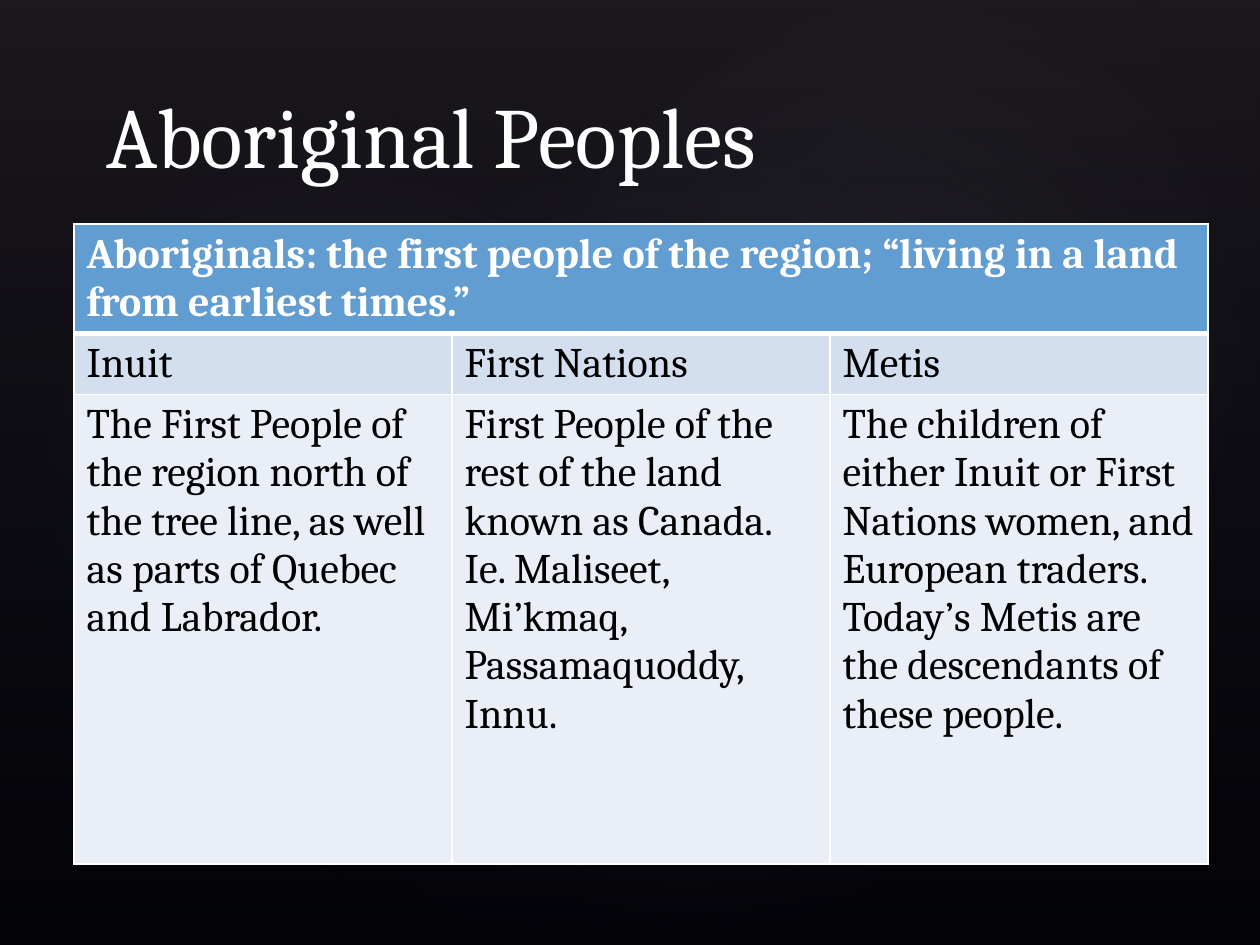
from pptx import Presentation
from pptx.dml.color import RGBColor
from pptx.enum.shapes import MSO_SHAPE
from pptx.enum.text import MSO_ANCHOR, MSO_AUTO_SIZE, PP_ALIGN
from pptx.oxml import parse_xml
from pptx.oxml.ns import nsdecls
from pptx.util import Emu, Pt

RECT, OVAL = MSO_SHAPE.RECTANGLE, MSO_SHAPE.OVAL
BOTTOM, LEFT, FIXED = MSO_ANCHOR.BOTTOM, PP_ALIGN.LEFT, MSO_AUTO_SIZE.NONE
FONT = "Cambria"
WHITE, BLACK = "FFFFFF", "000000"
LINEAR = '<a:lin ang="5400000" scaled="0"/>'
RADIAL = ('<a:path path="circle"><a:fillToRect l="50000" t="50000" '
          'r="50000" b="50000"/></a:path>')
GLOWS = [
    ((189, 144, 998, 786), 328.7, 7),
    ((-38, 161, 764, 617), 294.3, 8),
    ((451, 16, 893, 655), 328.7, 8),
]
ROWS = [
    (108, "629DD1", ["Aboriginals: the first people of the region; "
                     "“living in a land from earliest times.”"]),
    (61, "D3DFEE", ["Inuit", "First Nations", "Metis"]),
    (470, "EAEFF7", [
        "The First People of the region north of the tree line, "
        "as well as parts of Quebec and Labrador.",
        "First People of the rest of the land known as Canada.\n"
        "Ie. Maliseet, Mi’kmaq, Passamaquoddy, Innu.",
        "The children of either Inuit or First Nations women, "
        "and European traders.\n"
        "Today’s Metis are the descendants of these people.",
    ]),
]


def px(n):
    return Emu(round(n * 914400 / 126))


def rgb(code):
    return RGBColor.from_string(code)


def style(frame, size, color, bold=False):
    for para in frame.paragraphs:
        para.alignment = LEFT
        font = para.font
        font.name, font.size, font.bold = FONT, Pt(size), bold
        font.color.rgb = rgb(color)


def add_fade(slide, kind, box, turn, stops, path):
    shape = slide.shapes.add_shape(kind, *map(px, box))
    shape.rotation = turn
    shape.shadow.inherit = False
    shape.line.fill.background()
    shape.fill.background()
    marks = "".join(
        f'<a:gs pos="{pos * 1000}"><a:srgbClr val="{color}">'
        f'<a:alpha val="{alpha * 1000}"/></a:srgbClr></a:gs>'
        for pos, color, alpha in stops)
    grad = parse_xml(f'<a:gradFill {nsdecls("a")} rotWithShape="1">'
                     f'<a:gsLst>{marks}</a:gsLst>{path}</a:gradFill>')
    props = shape.fill._xPr
    props.replace(props.eg_fillProperties, grad)


def add_backdrop(slide, box):
    fill = slide.background.fill
    fill.solid()
    fill.fore_color.rgb = rgb(BLACK)
    add_fade(slide, RECT, box, 0,
             [(0, "504652", 36), (100, "242852", 10)], LINEAR)
    left, top = box[:2]
    for (x, y, w, h), turn, alpha in GLOWS:
        add_fade(slide, OVAL, (left + x, top + y, w, h), turn,
                 [(0, "C4BCC6", alpha), (58, "242852", 0)], RADIAL)


def add_title(slide, box, text):
    title = slide.shapes.title
    slide.shapes._spTree.append(title._element)
    title.left, title.top, title.width, title.height = map(px, box)
    frame = title.text_frame
    frame.text = text
    frame.auto_size = FIXED
    frame.vertical_anchor = BOTTOM
    style(frame, 49, WHITE)


def set_edges(cell, row):
    widths = {"L": 1, "R": 1, "T": 3 if row == 1 else 1,
              "B": 3 if row == 0 else 1}
    props = cell._tc.get_or_add_tcPr()
    for spot, (side, width) in enumerate(widths.items()):
        props.insert(spot, parse_xml(
            f'<a:ln{side} {nsdecls("a")} w="{Pt(width)}"><a:solidFill>'
            f'<a:srgbClr val="{WHITE}"/></a:solidFill></a:ln{side}>'))


def add_grid(slide, box):
    count = len(ROWS[-1][2])
    table = slide.shapes.add_table(len(ROWS), count, *map(px, box)).table
    for col in table.columns:
        col.width = px(box[2] // count)
    table.cell(0, 0).merge(table.cell(0, count - 1))
    for row, (height, color, texts) in enumerate(ROWS):
        table.rows[row].height = px(height)
        for col in range(count):
            cell = table.cell(row, col)
            cell.fill.solid()
            cell.fill.fore_color.rgb = rgb(color)
            set_edges(cell, row)
            if col < len(texts):
                cell.text = texts[col]
                style(cell.text_frame, 24, BLACK if row else WHITE, row == 0)


def main():
    deck = Presentation()
    deck.slide_width, deck.slide_height = px(1260), px(945)
    slide = deck.slides.add_slide(deck.slide_layouts[5])
    add_backdrop(slide, (0, 0, 1260, 945))
    add_grid(slide, (74, 224, 1134, 639))
    add_title(slide, (94, 66, 1040, 126), "Aboriginal Peoples")
    deck.save("out.pptx")


if __name__ == "__main__":
    main()
